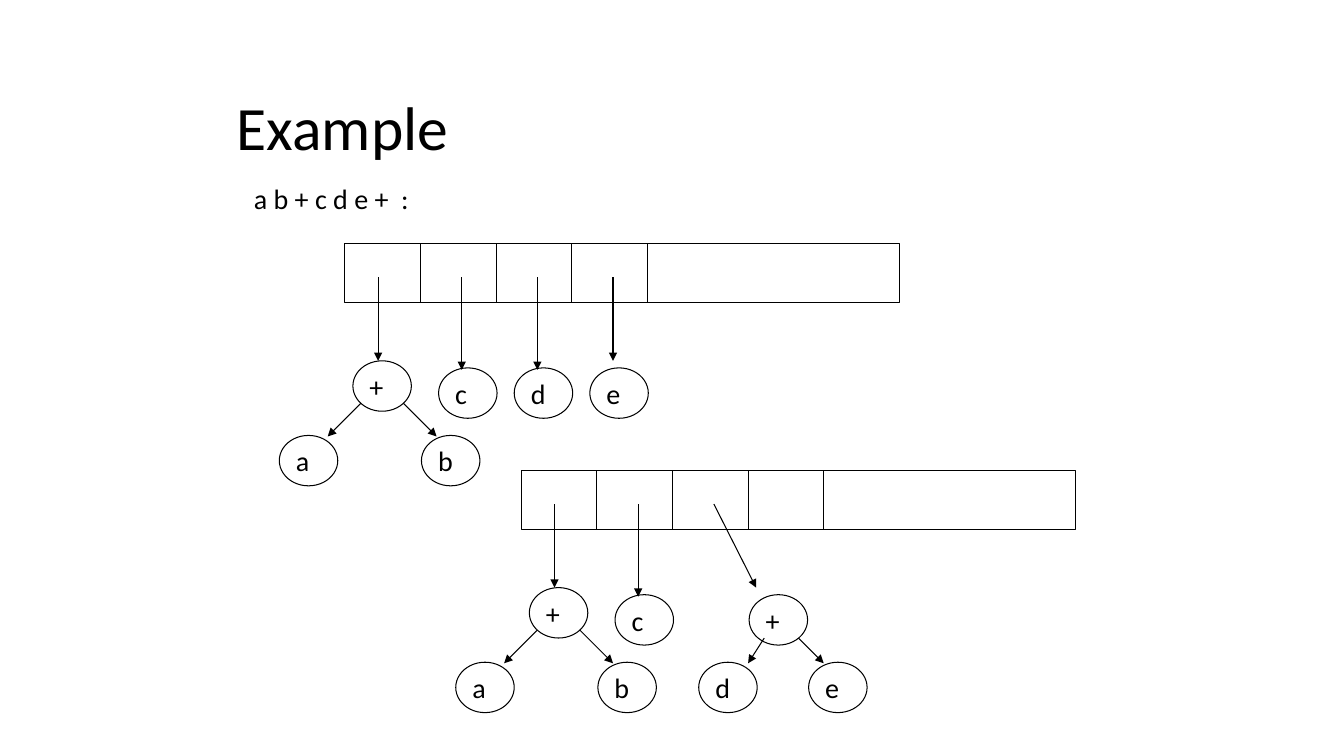
from dataclasses import dataclass

from pptx import Presentation
from pptx.dml.color import RGBColor
from pptx.enum.shapes import MSO_CONNECTOR, MSO_SHAPE
from pptx.enum.text import MSO_ANCHOR, PP_ALIGN
from pptx.oxml.ns import qn
from pptx.util import Inches, Pt
from lxml.etree import SubElement


@dataclass(frozen=True)
class Theme:
    """Colours, font and sizes of the slide."""
    ink: RGBColor = RGBColor(0, 0, 0)
    font: str = "Calibri"
    title_size: float = 44
    body_size: float = 20
    line_width: float = 0.75


@dataclass(frozen=True)
class Box:
    """A rectangle in inches."""
    left: float
    top: float
    width: float
    height: float

    def lengths(self):
        """Return the four measures as lengths."""
        return [Inches(value) for value in (self.left, self.top, self.width, self.height)]


THEME = Theme()
CELL_WIDTH = 0.75
CELL_COUNT = 4
NODE_WIDTH, NODE_HEIGHT = 0.58, 0.5

SUM_TREE_NODES = [("+", 0.08, 1.16), ("a", -0.65, 1.9), ("b", 0.76, 1.9), ("c", 0.93, 1.23)]
SUM_TREE_ARROWS = [
    (0.33, 0.33, 0.33, 1.16),
    (0.16, 1.58, -0.17, 1.91),
    (0.58, 1.58, 0.91, 1.91),
    (1.16, 0.33, 1.16, 1.25),
]
OPERAND_NODES = [("d", 1.68, 1.23), ("e", 2.43, 1.23)]
OPERAND_ARROWS = [(1.91, 0.33, 1.91, 1.25), (2.66, 0.33, 2.66, 1.16)]
SECOND_SUM_NODES = [("+", 2.26, 1.23), ("d", 1.76, 1.9), ("e", 2.85, 1.9)]
SECOND_SUM_ARROWS = [
    (1.91, 0.33, 2.33, 1.16),
    (2.41, 1.66, 2.25, 1.91),
    (2.75, 1.66, 3.0, 1.91),
]


def write_text(frame, text, *, size, wrap=True, anchor=MSO_ANCHOR.TOP, spacing=1.0):
    """Write one left-aligned paragraph into a text frame."""
    frame.word_wrap = wrap
    frame.vertical_anchor = anchor
    para = frame.paragraphs[0]
    para.alignment = PP_ALIGN.LEFT
    para.line_spacing = spacing
    span = para.add_run()
    span.text = text
    span.font.name = THEME.font
    span.font.size = Pt(size)
    span.font.color.rgb = THEME.ink


def draw_outline(page, kind, box):
    """Draw an unfilled preset shape with a thin outline."""
    shape = page.shapes.add_shape(kind, *box.lengths())
    shape.shadow.inherit = False
    shape.fill.background()
    shape.line.color.rgb = THEME.ink
    shape.line.width = Pt(THEME.line_width)
    return shape


def draw_line(page, start_x, start_y, end_x, end_y, *, arrow=False):
    """Draw a straight line, with an arrowhead at its end if asked."""
    points = [Inches(value) for value in (start_x, start_y, end_x, end_y)]
    line = page.shapes.add_connector(MSO_CONNECTOR.STRAIGHT, *points)
    line.line.color.rgb = THEME.ink
    line.line.width = Pt(THEME.line_width)
    if arrow:
        SubElement(line.line._get_or_add_ln(), qn("a:tailEnd"), type="triangle")
    SubElement(line._element.spPr, qn("a:effectLst"))


def draw_node(page, box, label):
    """Draw a tree node with its label."""
    frame = draw_outline(page, MSO_SHAPE.OVAL, box).text_frame
    frame.margin_left = Inches(0.08)
    frame.margin_right = frame.margin_top = frame.margin_bottom = 0
    write_text(frame, label, size=THEME.body_size, anchor=MSO_ANCHOR.MIDDLE)


def draw_stack(page, box, nodes, arrows):
    """Draw a stack with the trees its cells point to, placed from its corner."""
    draw_outline(page, MSO_SHAPE.RECTANGLE, box)
    for index in range(1, CELL_COUNT + 1):
        edge = box.left + index * CELL_WIDTH
        draw_line(page, edge, box.top, edge, box.top + box.height)
    for label, across, down in nodes:
        node_box = Box(box.left + across, box.top + down, NODE_WIDTH, NODE_HEIGHT)
        draw_node(page, node_box, label)
    for start_x, start_y, end_x, end_y in arrows:
        draw_line(page, box.left + start_x, box.top + start_y,
                  box.left + end_x, box.top + end_y, arrow=True)


def draw_heading(page, box):
    """Write the slide title."""
    frame = page.shapes.add_textbox(*box.lengths()).text_frame
    write_text(frame, "Example", size=THEME.title_size, anchor=MSO_ANCHOR.MIDDLE, spacing=0.9)


def draw_expression(page, box):
    """Write the postfix expression read so far."""
    frame = page.shapes.add_textbox(*box.lengths()).text_frame
    write_text(frame, "a b + c d e +  :", size=THEME.body_size, wrap=False)


def main():
    """Build and save the deck."""
    deck = Presentation()
    deck.slide_width, deck.slide_height = Inches(13.33), Inches(7.5)
    page = deck.slides.add_slide(deck.slide_layouts[6])
    draw_heading(page, Box(2.25, 0.67, 8.5, 1.25))
    draw_expression(page, Box(2.42, 1.75, 1.79, 0.43))
    draw_stack(page, Box(3.42, 2.42, 5.5, 0.58),
               SUM_TREE_NODES + OPERAND_NODES, SUM_TREE_ARROWS + OPERAND_ARROWS)
    draw_stack(page, Box(5.17, 4.67, 5.5, 0.58),
               SUM_TREE_NODES + SECOND_SUM_NODES, SUM_TREE_ARROWS + SECOND_SUM_ARROWS)
    deck.save("out.pptx")


if __name__ == "__main__":
    main()
